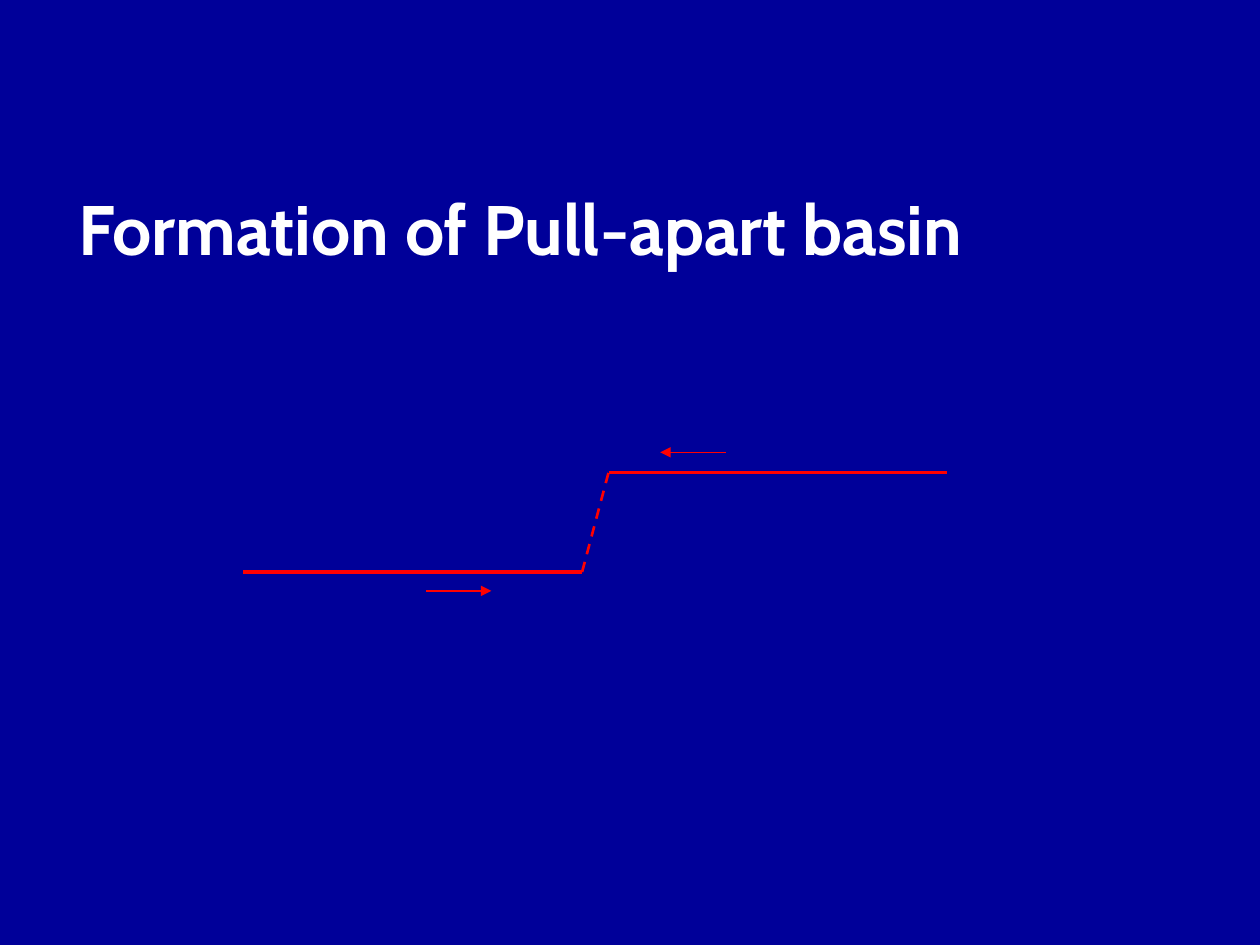
"""Build a slide showing how a pull-apart basin forms between two fault strands."""
from lxml import etree
from pptx import Presentation, util as u
from pptx.dml.color import RGBColor
from pptx.enum import dml, shapes, text
from pptx.oxml.ns import qn

WIDTH, HEIGHT = 10, 7.5
NAVY = RGBColor(0x00, 0x00, 0x99)
WHITE = RGBColor(0xFF, 0xFF, 0xFF)
RED = RGBColor(0xFF, 0x00, 0x00)

STRAND = 2.69
ARROW = 0.52
LOWER_START, LOWER_Y = 1.93, 4.54
UPPER_START, UPPER_Y = 4.83, 3.75
LOWER_END = LOWER_START + STRAND


def add_text(page, words, left, top, width, height, *, size, color, font, bold=False, inset=0.1):
    """Add a wrapped, left-aligned text box anchored in the middle."""
    box = page.shapes.add_textbox(*map(u.Inches, (left, top, width, height)))
    frame = box.text_frame
    frame.word_wrap = True
    frame.vertical_anchor = text.MSO_ANCHOR.MIDDLE
    frame.margin_left = u.Inches(inset)
    para = frame.paragraphs[0]
    para.alignment = text.PP_ALIGN.LEFT
    span = para.add_run()
    span.text = words
    span.font.name = font
    span.font.size = u.Pt(size)
    span.font.bold = bold
    span.font.color.rgb = color
    return box


def add_line(page, start, end, weight, *, dashed=False, arrow=False):
    """Draw a red straight line, optionally dashed or with an arrowhead at its end."""
    line = page.shapes.add_connector(
        shapes.MSO_CONNECTOR.STRAIGHT, *map(u.Inches, (*start, *end)))
    line.line.color.rgb = RED
    line.line.width = u.Pt(weight)
    if dashed:
        line.line.dash_style = dml.MSO_LINE.DASH
    if arrow:
        etree.SubElement(line.line._get_or_add_ln(), qn("a:tailEnd"), type="triangle")
    etree.SubElement(line._element.spPr, qn("a:effectLst"))
    return line


def add_faults(page):
    """Draw both fault strands, the dashed step between them and the slip arrows."""
    for left, level in ((LOWER_START, LOWER_Y), (UPPER_START, UPPER_Y)):
        add_line(page, (left, level), (left + STRAND, level), 2.25)
    add_line(page, (LOWER_END, LOWER_Y), (UPPER_START, UPPER_Y), 1.5, dashed=True)
    for left, level, slip in ((5.76, 3.59, -ARROW), (3.38, 4.69, ARROW)):
        add_line(page, (left, level), (left + slip, level), 0.75, arrow=True)


def main():
    """Create the deck and save it."""
    deck = Presentation()
    deck.slide_width, deck.slide_height = u.Inches(WIDTH), u.Inches(HEIGHT)
    page = deck.slides.add_slide(deck.slide_layouts[6])
    page.background.fill.solid()
    page.background.fill.fore_color.rgb = NAVY
    add_text(page, "Formation of Pull-apart basin", 0.42, 1.2, 8.92, 1.21,
             size=40, color=WHITE, font="Cabin", bold=True, inset=0.2)
    add_faults(page)
    deck.save("out.pptx")


if __name__ == "__main__":
    main()
